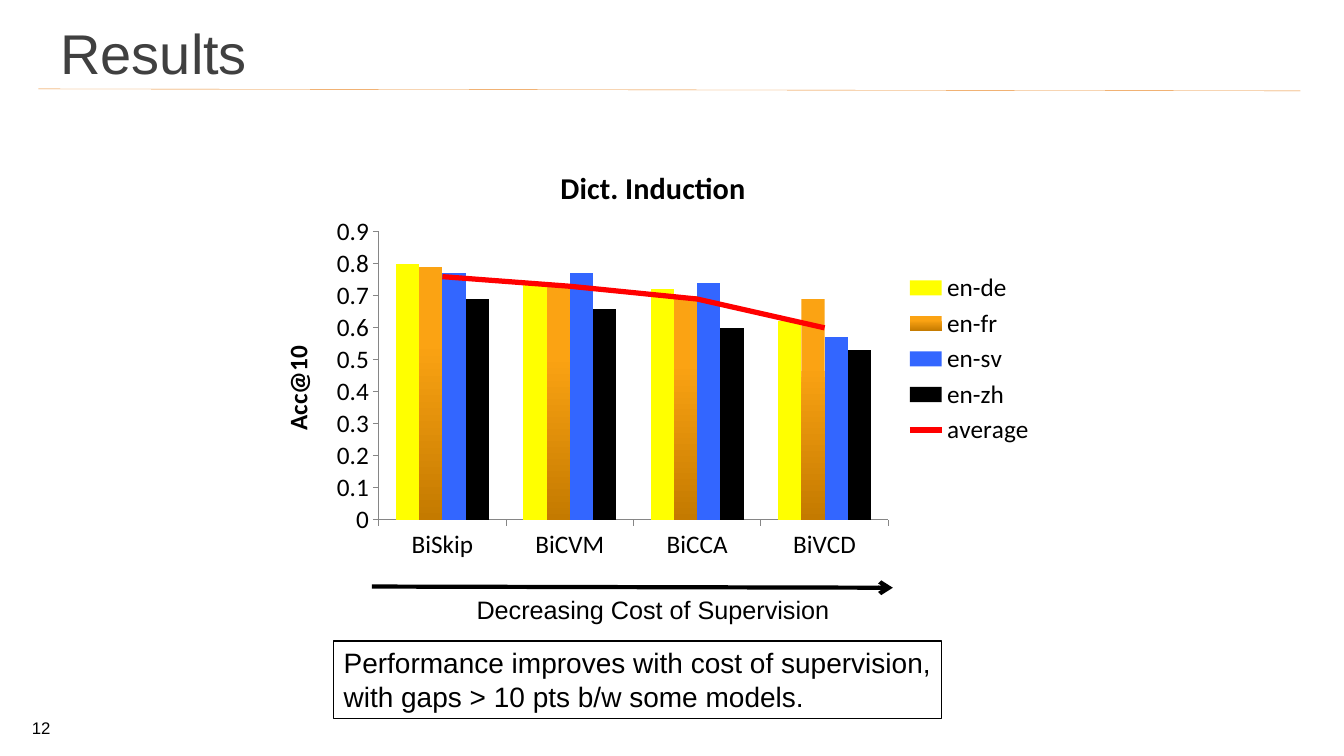
from dataclasses import dataclass

from lxml.etree import SubElement
from pptx import Presentation
from pptx.chart.data import CategoryChartData
from pptx.dml.color import RGBColor
from pptx.enum.chart import XL_CHART_TYPE, XL_LEGEND_POSITION, XL_TICK_MARK
from pptx.enum.shapes import MSO_CONNECTOR, MSO_SHAPE
from pptx.enum.text import MSO_ANCHOR, PP_ALIGN
from pptx.oxml import parse_xml
from pptx.oxml.ns import nsdecls, qn
from pptx.util import Cm, Pt

HUES = {
    "black": "000000", "title": "404040", "rule": "EA8A2A", "axis": "868686",
    "yellow": "FFFF00", "orange": "FBA313", "brown": "C47A00",
    "blue": "3366FF", "red": "FF0000",
}
MODELS = ["BiSkip", "BiCVM", "BiCCA", "BiVCD"]


@dataclass
class Series:
    name: str
    vals: tuple
    hue: str
    shade: str = ""


@dataclass
class Line:
    start: tuple
    end: tuple
    hue: str
    width: float
    arrow: bool = False


@dataclass
class Note:
    text: str
    area: tuple
    size: int
    align: PP_ALIGN = PP_ALIGN.LEFT
    anchor: MSO_ANCHOR = MSO_ANCHOR.TOP
    wrap: bool = True
    frame: bool = False


SERIES = [
    Series("en-de", (0.8, 0.74, 0.72, 0.62), "yellow"),
    Series("en-fr", (0.79, 0.73, 0.7, 0.69), "orange", "brown"),
    Series("en-sv", (0.77, 0.77, 0.74, 0.57), "blue"),
    Series("en-zh", (0.69, 0.66, 0.6, 0.53), "black"),
    Series("average", (0.76, 0.73, 0.69, 0.6), "red"),
]
LINES = [
    Line((0.97, 2.24), (32.77, 2.29), "rule", 0.25),
    Line((9.37, 14.78), (22.5, 14.81), "black", 3, arrow=True),
]
NOTES = [
    Note("12", (0.33, 18.08, 1.42, 0.64), 12, PP_ALIGN.CENTER, MSO_ANCHOR.BOTTOM),
    Note("Performance improves with cost of supervision, "
         "with gaps > 10 pts b/w some models.",
         (8.41, 16.15, 15.32, 1.96), 20, frame=True),
    Note("Decreasing Cost of Supervision", (11.76, 14.86, 9.5, 1.02), 18, wrap=False),
]


def tint(name: str) -> RGBColor:
    return RGBColor.from_string(HUES[name])


def style(font, size: float, hue: str = "black", face: str = "Arial", bold=None) -> None:
    font.name, font.size, font.bold = face, Pt(size), bold
    font.color.rgb = tint(hue)


def add_line(slide, item: Line) -> None:
    ends = [Cm(v) for v in item.start + item.end]
    line = slide.shapes.add_connector(MSO_CONNECTOR.STRAIGHT, *ends)
    line.line.color.rgb = tint(item.hue)
    line.line.width = Pt(item.width)
    if item.arrow:
        SubElement(line.line._get_or_add_ln(), qn("a:tailEnd"), type="arrow")
    SubElement(line._element.spPr, qn("a:effectLst"))


def add_note(slide, note: Note) -> None:
    area = [Cm(v) for v in note.area]
    if note.frame:
        box = slide.shapes.add_shape(MSO_SHAPE.RECTANGLE, *area)
        box.shadow.inherit = False
        box.fill.background()
        box.line.color.rgb = tint("black")
        box.line.width = Pt(1)
    else:
        box = slide.shapes.add_textbox(*area)
    frame = box.text_frame
    frame.text = note.text
    frame.word_wrap = note.wrap
    frame.vertical_anchor = note.anchor
    para = frame.paragraphs[0]
    para.alignment = note.align
    style(para.runs[0].font, note.size)


def label(owner, text: str, size: float) -> None:
    frame = owner.text_frame
    frame.text = text
    style(frame.paragraphs[0].runs[0].font, size, face="Calibri", bold=True)


def paint(bar, item: Series) -> None:
    fill = bar.format.fill
    bar.invert_if_negative = False
    if not item.shade:
        fill.solid()
        fill.fore_color.rgb = tint(item.hue)
        return
    fill.gradient()
    fill.gradient_angle = 270
    for stop, hue, spot in zip(fill.gradient_stops, (item.hue, item.shade), (0.3, 1)):
        stop.color.rgb = tint(hue)
        stop.position = spot


def to_line(chart, ser) -> None:
    """Move a bar series into a line plot on the same axes."""
    bars = ser.getparent()
    plot = parse_xml(
        f'<c:lineChart {nsdecls("c")}><c:grouping val="standard"/>'
        '<c:varyColors val="0"/></c:lineChart>')
    bars.addnext(plot)
    plot.append(ser)
    flip = ser.find(qn("c:invertIfNegative"))
    mark = parse_xml(f'<c:marker {nsdecls("c")}><c:symbol val="none"/></c:marker>')
    ser.replace(flip, mark)
    SubElement(ser, qn("c:smooth"), val="0")
    SubElement(plot, qn("c:marker"), val="1")
    for axis in bars.findall(qn("c:axId")):
        SubElement(plot, qn("c:axId"), val=axis.get("val"))


def set_plot(chart, **area: float) -> None:
    """Fix the inner plot area as shares of the chart."""
    zone = chart._chartSpace.chart.plotArea
    for old in zone.findall(qn("c:layout")):
        zone.remove(old)
    modes = '<c:xMode val="edge"/><c:yMode val="edge"/>'
    sizes = "".join(f'<c:{key} val="{val}"/>' for key, val in area.items())
    zone.insert(0, parse_xml(
        f'<c:layout {nsdecls("c")}><c:manualLayout><c:layoutTarget val="inner"/>'
        f'{modes}{sizes}</c:manualLayout></c:layout>'))


def add_graph(slide) -> None:
    data = CategoryChartData()
    data.categories = MODELS
    for item in SERIES:
        data.add_series(item.name, item.vals)
    area = [Cm(v) for v in (6.58, 3.71, 19.76, 10.67)]
    chart = slide.shapes.add_chart(XL_CHART_TYPE.COLUMN_CLUSTERED, *area, data).chart
    style(chart.font, 18, face="Calibri")
    chart.has_title = True
    label(chart.chart_title, "Dict. Induction", 21.6)
    chart.has_legend = True
    chart.legend.position = XL_LEGEND_POSITION.RIGHT
    chart.legend.include_in_layout = False
    for axis in (chart.category_axis, chart.value_axis):
        axis.has_major_gridlines = False
        axis.major_tick_mark = XL_TICK_MARK.OUTSIDE
        axis.format.line.color.rgb = tint("axis")
    scale = chart.value_axis
    scale.minimum_scale, scale.maximum_scale, scale.major_unit = 0, 0.9, 0.1
    scale.tick_labels.number_format = "General"
    scale.tick_labels.number_format_is_linked = False
    label(scale.axis_title, "Acc@10", 18)
    plot = chart.plots[0]
    plot.gap_width, plot.overlap, plot.vary_by_categories = 150, 0, False
    *bars, mean = plot.series
    for bar, item in zip(bars, SERIES):
        paint(bar, item)
    mean.invert_if_negative = False
    mean.format.line.color.rgb = tint(SERIES[-1].hue)
    mean.format.line.width = Pt(3.75)
    to_line(chart, mean._element)
    set_plot(chart, x=0.15, y=0.2, w=0.65, h=0.68)


def main() -> None:
    deck = Presentation()
    deck.slide_width, deck.slide_height = Cm(33.87), Cm(19.05)
    slide = deck.slides.add_slide(deck.slide_layouts[5])
    title = slide.shapes.title
    title.left, title.top, title.width, title.height = map(Cm, (1.27, 0.58, 29.49, 1.47))
    title.text_frame.text = "Results"
    title.text_frame.vertical_anchor = MSO_ANCHOR.MIDDLE
    head = title.text_frame.paragraphs[0]
    head.alignment = PP_ALIGN.LEFT
    style(head.runs[0].font, 40, "title")
    add_graph(slide)
    for item in LINES:
        add_line(slide, item)
    for note in NOTES:
        add_note(slide, note)
    deck.save("out.pptx")


if __name__ == "__main__":
    main()
